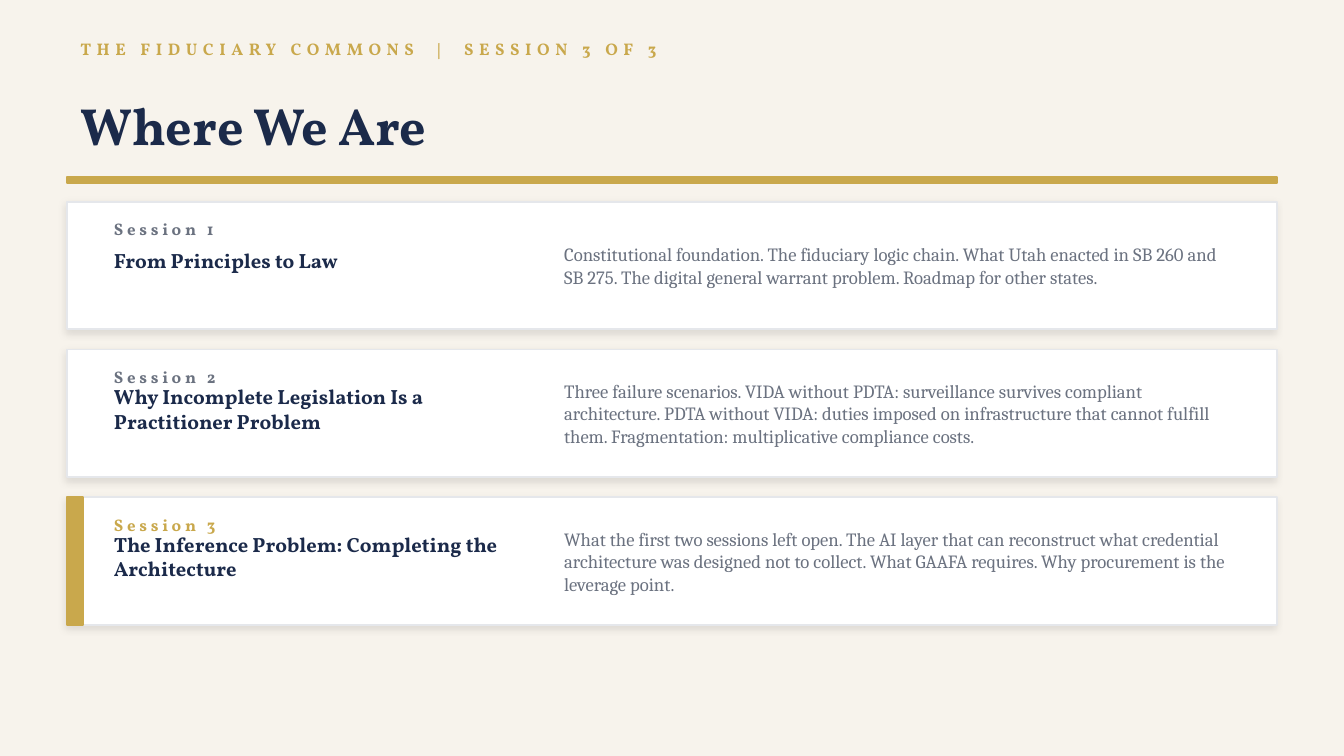
import lxml.etree
import pptx
import pptx.dml.color
import pptx.enum.shapes
import pptx.enum.text
import pptx.oxml.ns
import pptx.util

HEADER = "THE FIDUCIARY COMMONS  |  SESSION 3 OF 3"
TITLE = "Where We Are"
SESSIONS = [
    ("Session 1", "From Principles to Law",
     "Constitutional foundation. The fiduciary logic chain. What Utah enacted in "
     "SB 260 and SB 275. The digital general warrant problem. Roadmap for other states."),
    ("Session 2", "Why Incomplete Legislation Is a Practitioner Problem",
     "Three failure scenarios. VIDA without PDTA: surveillance survives compliant "
     "architecture. PDTA without VIDA: duties imposed on infrastructure that cannot "
     "fulfill them. Fragmentation: multiplicative compliance costs."),
    ("Session 3", "The Inference Problem: Completing the Architecture",
     "What the first two sessions left open. The AI layer that can reconstruct what "
     "credential architecture was designed not to collect. What GAAFA requires. "
     "Why procurement is the leverage point."),
]
CURRENT = "Session 3"

THEME = {
    "paper": "F7F3EC", "gold": "C9A84C", "navy": "1B2A4A",
    "gray": "6B7280", "card": "FFFFFF", "border": "E5E7EB", "shadow": "000000",
    "display": "Vollkorn", "body": "Cambria",
    "label_size": 9, "title_size": 28, "heading_size": 11, "body_size": 10,
}

WIDTH = 10
HEIGHT = WIDTH * 9 / 16
MARGIN = 0.5
CONTENT = WIDTH - 2 * MARGIN
CARD_TOP, CARD_HEIGHT, CARD_GAP = 1.5, 0.95, 0.15
LEFT_COLUMN, RIGHT_COLUMN = 0.75, 4.1


def color(name):
    return pptx.dml.color.RGBColor.from_string(THEME[name])


def inches(*lengths):
    return [pptx.util.Inches(round(length, 3)) for length in lengths]


def add_text(page, area, text, size, tint, font="display", spacing=0):
    """Add one vertically centred paragraph; spacing is in points between letters."""
    box = page.shapes.add_textbox(*inches(*area))
    frame = box.text_frame
    frame.word_wrap = True
    frame.vertical_anchor = pptx.enum.text.MSO_ANCHOR.MIDDLE
    frame.text = text
    span = frame.paragraphs[0].runs[0]
    span.font.name = THEME[font]
    span.font.size = pptx.util.Pt(THEME[size])
    span.font.bold = font == "display"
    span.font.color.rgb = color(tint)
    if spacing:
        span._r.get_or_add_rPr().set("spc", str(spacing * 100))


def add_bar(page, area, fill, line):
    bar = page.shapes.add_shape(pptx.enum.shapes.MSO_SHAPE.RECTANGLE, *inches(*area))
    bar.shadow.inherit = False
    bar.fill.solid()
    bar.fill.fore_color.rgb = color(fill)
    bar.line.color.rgb = color(line)
    bar.line.width = pptx.util.Pt(1)
    return bar


def add_soft_shadow(shape):
    qn = pptx.oxml.ns.qn
    effects = shape._element.spPr.find(qn("a:effectLst"))
    shadow = lxml.etree.SubElement(
        effects, qn("a:outerShdw"), blurRad=str(pptx.util.Pt(4)),
        dist=str(pptx.util.Pt(2)), dir=str(135 * 60000), algn="bl", rotWithShape="0")
    tint = lxml.etree.SubElement(shadow, qn("a:srgbClr"), val=THEME["shadow"])
    lxml.etree.SubElement(tint, qn("a:alpha"), val="10000")


def add_session(page, row, label, heading, summary):
    top = CARD_TOP + row * (CARD_HEIGHT + CARD_GAP)
    add_soft_shadow(add_bar(page, (MARGIN, top, CONTENT, CARD_HEIGHT), "card", "border"))
    current = label == CURRENT
    if current:
        add_bar(page, (MARGIN, top, 0.12, CARD_HEIGHT), "gold", "gold")
    add_text(page, (LEFT_COLUMN, top + 0.08, 1.2, 0.25), label, "label_size",
             "gold" if current else "gray", spacing=2)
    add_text(page, (LEFT_COLUMN, top + 0.3, 3.2, 0.28), heading, "heading_size", "navy")
    add_text(page, (RIGHT_COLUMN, top + 0.1, 5.2, CARD_HEIGHT - 0.2), summary,
             "body_size", "gray", font="body")


def main():
    deck = pptx.Presentation()
    deck.slide_width, deck.slide_height = inches(WIDTH, HEIGHT)
    page = deck.slides.add_slide(deck.slide_layouts[6])
    page.background.fill.solid()
    page.background.fill.fore_color.rgb = color("paper")

    add_text(page, (MARGIN, 0.22, CONTENT, 0.28), HEADER, "label_size", "gold", spacing=3)
    add_text(page, (MARGIN, 0.55, CONTENT, 0.75), TITLE, "title_size", "navy")
    add_bar(page, (MARGIN, 1.32, CONTENT, 0.04), "gold", "gold")
    for row, session in enumerate(SESSIONS):
        add_session(page, row, *session)
    deck.save("out.pptx")


if __name__ == "__main__":
    main()
